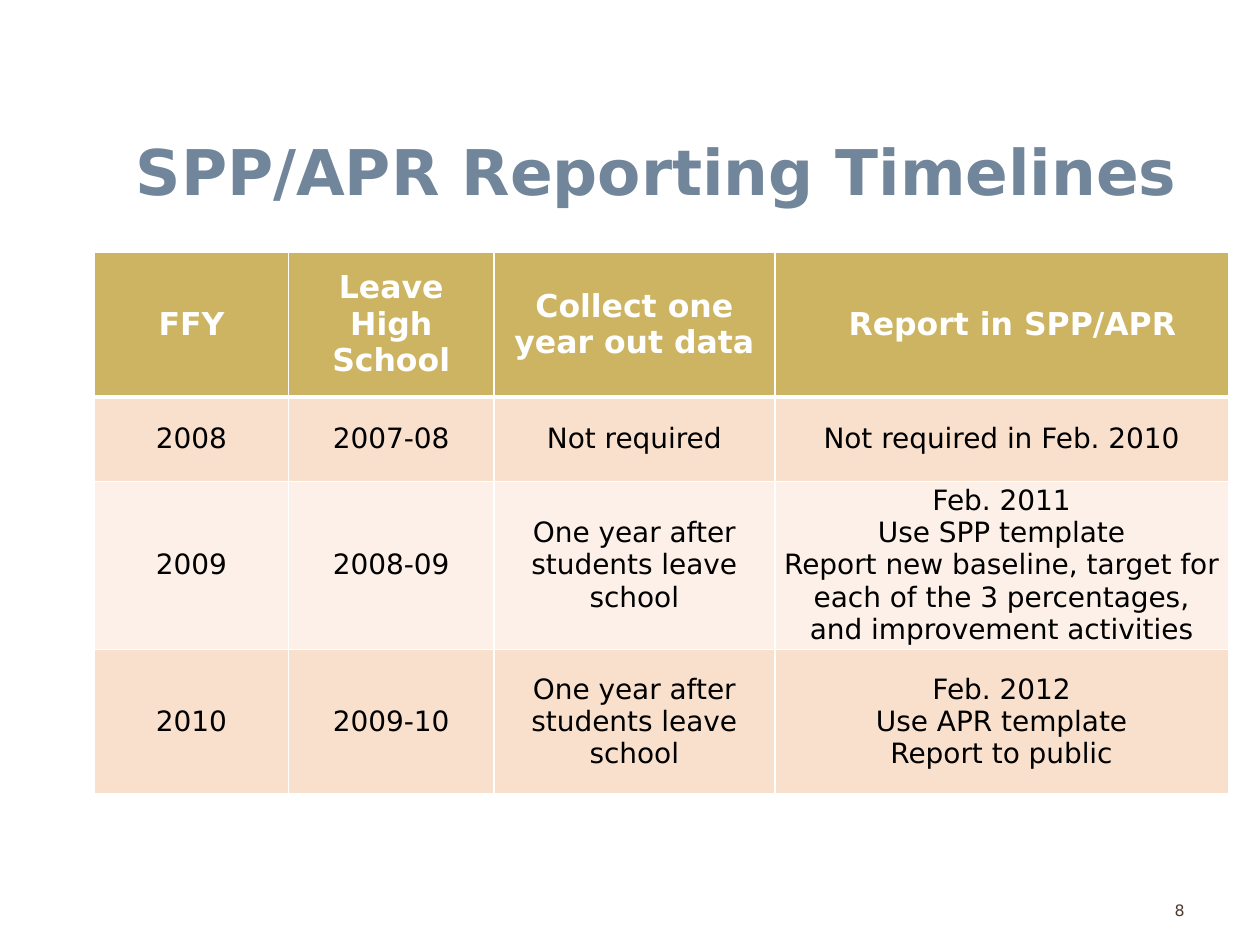
from lxml.etree import SubElement
from pptx import Presentation
from pptx.dml.color import RGBColor
from pptx.enum.text import MSO_ANCHOR, MSO_AUTO_SIZE, PP_ALIGN
from pptx.oxml.ns import qn
from pptx.util import Inches, Pt

FONT = "DejaVu Sans"
WHITE = RGBColor(0xFF, 0xFF, 0xFF)
BLACK = RGBColor(0x00, 0x00, 0x00)
SLATE = RGBColor(0x72, 0x86, 0x9B)
BROWN = RGBColor(0x4E, 0x3B, 0x30)
GOLD = RGBColor(0xCC, 0xB4, 0x62)
PEACH = RGBColor(0xF9, 0xE0, 0xCD)
PALE_PEACH = RGBColor(0xFC, 0xF0, 0xE8)

COLUMN_WIDTHS = [1.54, 1.63, 2.23, 3.6]
ROW_HEIGHTS = [1.15, 0.67, 1.27, 1.15]
ROW_FILLS = [GOLD, PEACH, PALE_PEACH, PEACH]
TIMELINE = [
    ["FFY", "Leave High School", "Collect one year out data", "Report in SPP/APR"],
    ["2008", "2007-08", "Not required", "Not required in Feb. 2010"],
    ["2009", "2008-09", "One year after students leave school",
     "Feb. 2011\nUse SPP template\nReport new baseline, target for each of "
     "the 3 percentages, and improvement activities"],
    ["2010", "2009-10", "One year after students leave school",
     "Feb. 2012\nUse APR template\nReport to public"],
]


def write(frame, text, size, color, bold=False, align=PP_ALIGN.CENTER):
    """Fill a text frame with one paragraph per line of text."""
    for index, line in enumerate(text.split("\n")):
        paragraph = frame.add_paragraph() if index else frame.paragraphs[0]
        paragraph.alignment = align
        run = paragraph.add_run()
        run.text = line
        run.font.name = FONT
        run.font.size = Pt(size)
        run.font.bold = bold
        run.font.color.rgb = color


def set_borders(cell, widths):
    """Draw white borders, with widths in points keyed by side (L, R, T, B)."""
    properties = cell._tc.get_or_add_tcPr()
    for index, (side, width) in enumerate(widths.items()):
        line = SubElement(properties, qn(f"a:ln{side}"), w=str(Pt(width)))
        fill = SubElement(line, qn("a:solidFill"))
        SubElement(fill, qn("a:srgbClr"), val=str(WHITE))
        properties.insert(index, line)


prs = Presentation()
prs.slide_width = Inches(10)
prs.slide_height = Inches(7.5)
slide = prs.slides.add_slide(prs.slide_layouts[5])

# Timeline table
timeline = slide.shapes.add_table(
    len(ROW_HEIGHTS), len(COLUMN_WIDTHS),
    Inches(0.75), Inches(2), Inches(9), Inches(sum(ROW_HEIGHTS))).table
for column, width in zip(timeline.columns, COLUMN_WIDTHS):
    column.width = Inches(width)
for row, height in zip(timeline.rows, ROW_HEIGHTS):
    row.height = Inches(height)

for r, entries in enumerate(TIMELINE):
    is_header = r == 0
    for c, entry in enumerate(entries):
        cell = timeline.cell(r, c)
        cell.vertical_anchor = MSO_ANCHOR.MIDDLE
        cell.margin_left = cell.margin_right = Inches(0.07)
        cell.margin_top = cell.margin_bottom = 0
        cell.fill.solid()
        cell.fill.fore_color.rgb = ROW_FILLS[r]
        set_borders(cell, {"L": 1, "R": 1, "T": 3 if r == 1 else 1,
                           "B": 3 if is_header else 1})
        if is_header:
            write(cell.text_frame, entry, 18, WHITE, bold=True)
            cell.text_frame.paragraphs[0].space_after = Pt(6)
        else:
            write(cell.text_frame, entry, 16, BLACK)
# The last heading sits slightly right of centre
timeline.cell(0, 3).margin_left = Inches(0.24)

# Slide number
page_number = slide.shapes.add_textbox(
    Inches(7.17), Inches(6.83), Inches(2.33), Inches(0.52)).text_frame
page_number.word_wrap = True
page_number.vertical_anchor = MSO_ANCHOR.BOTTOM
write(page_number, "8", 9, BROWN, align=PP_ALIGN.RIGHT)

# Title
title = slide.shapes.title
title.left, title.top = Inches(0.92), Inches(1)
title.width, title.height = Inches(9.08), Inches(0.71)
heading = title.text_frame
heading.word_wrap = True
heading.auto_size = MSO_AUTO_SIZE.SHAPE_TO_FIT_TEXT
heading.vertical_anchor = MSO_ANCHOR.MIDDLE
heading.margin_left, heading.margin_right = 0, Inches(0.5)
heading.margin_top = heading.margin_bottom = Inches(0.05)
write(heading, "SPP/APR Reporting Timelines", 36, SLATE, bold=True)

prs.save("out.pptx")
